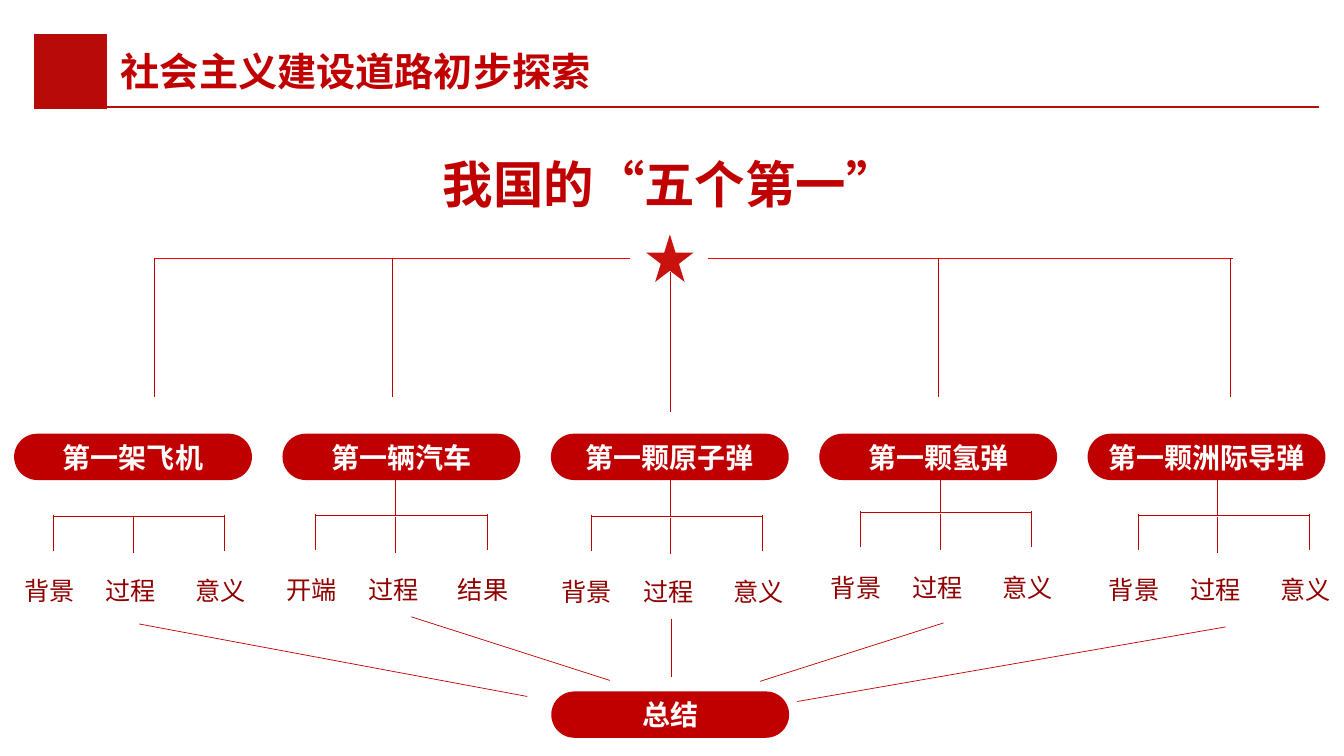
import pptx
import pptx.util
import pptx.dml.color
import pptx.enum.shapes
import pptx.enum.text
import pptx.oxml.ns
import lxml.etree

Pt = pptx.util.Pt
RGBColor = pptx.dml.color.RGBColor
SHAPE = pptx.enum.shapes.MSO_SHAPE
ALIGN = pptx.enum.text.PP_ALIGN
ANCHOR = pptx.enum.text.MSO_ANCHOR

BANNER_RED = RGBColor(0xB8, 0x0B, 0x09)
RED = RGBColor(0xC0, 0x00, 0x00)
BRIGHT_RED = RGBColor(0xFF, 0x00, 0x00)
STAR_RED = RGBColor(0xC9, 0x11, 0x0E)
DARK_RED = RGBColor(0x90, 0x00, 0x00)
WHITE = RGBColor(0xFF, 0xFF, 0xFF)

FONT = "Noto Sans CJK SC"
HEADING = {"size": Pt(28), "bold": True}
TITLE = {"size": Pt(36), "bold": True}
PILL = {"size": Pt(20), "bold": True}
LABEL = {"size": Pt(18), "bold": False}

PILL_LEFT, PILL_TOP, PILL_STEP = 10.1, 309.8, 191.7
PILL_W, PILL_H = 169.9, 33.1
TRUNK_Y = 184.3

# Offset from the branch's left edge, and box width, of its three labels
LABEL_COLUMNS = [(0, 122.4), (58.3, 140.4), (122.6, 76.3)]
# Offset of each tick, and its drop below the branch bar
TICKS = [(28.1, -1), (84.9, 1), (150.5, -1)]

# Pill text, labels, branch left, bar height, has stem, trunk line, summary line
TOPICS = [
    ("第一架飞机", ("背景", "过程", "意义"), 10.1, 368.6, False,
     (110.2, TRUNK_Y, 283.7), (99.4, 445.7, 376.6, 497.5)),
    ("第一辆汽车", ("开端", "过程", "结果"), 197.5, 368, True,
     (280.1, TRUNK_Y, 283.7), (293.8, 440.6, 435.6, 486)),
    ("第一颗原子弹", ("背景", "过程", "意义"), 394, 369, True,
     (478.8, 194.4, 294.5), (479.5, 442.1, 479.5, 483.8)),
    ("第一颗氢弹", ("背景", "过程", "意义"), 586.5, 366.2, True,
     (670.3, TRUNK_Y, 283.7), (673.9, 445, 542.9, 486.7)),
    ("第一颗洲际导弹", ("背景", "过程", "意义"), 785, 368, True,
     (879.1, TRUNK_Y, 283.7), (875.5, 447.8, 569.5, 501.1)),
]


def write(tf, text, style, color, align=ALIGN.LEFT):
    p = tf.paragraphs[0]
    p.alignment = align
    r = p.add_run()
    r.text = text
    for name, value in style.items():
        setattr(r.font, name, value)
    r.font.name = FONT
    r.font.color.rgb = color
    ea = lxml.etree.SubElement(r.font._element, pptx.oxml.ns.qn("a:ea"))
    ea.set("typeface", FONT)


def add_text(s, box, text, style, color, align=ALIGN.LEFT, wrap=True):
    tf = s.shapes.add_textbox(*map(Pt, box)).text_frame
    tf.word_wrap = wrap
    write(tf, text, style, color, align)


def add_line(s, x1, y1, x2, y2, color=RED, width=0.5):
    kind = pptx.enum.shapes.MSO_CONNECTOR.STRAIGHT
    line = s.shapes.add_connector(kind, Pt(x1), Pt(y1), Pt(x2), Pt(y2))
    line.line.color.rgb = color
    line.line.width = Pt(width)
    lxml.etree.SubElement(line._element.spPr, pptx.oxml.ns.qn("a:effectLst"))


def add_block(s, kind, box, color):
    sp = s.shapes.add_shape(kind, *map(Pt, box))
    sp.shadow.inherit = False
    sp.fill.solid()
    sp.fill.fore_color.rgb = color
    sp.line.fill.background()
    return sp


def add_pill(s, left, top, text):
    sp = add_block(s, SHAPE.ROUNDED_RECTANGLE, (left, top, PILL_W, PILL_H), RED)
    sp.adjustments[0] = 0.5
    sp.text_frame.word_wrap = True
    sp.text_frame.vertical_anchor = ANCHOR.MIDDLE
    write(sp.text_frame, text, PILL, WHITE, ALIGN.CENTER)


def add_branch(s, left, bar_y, labels, has_stem):
    """Draw the bracket below a pill and its three labels."""
    for label, (dx, width) in zip(labels, LABEL_COLUMNS):
        add_text(s, (left + dx, bar_y + 39, width, 29), label, LABEL, DARK_RED)
    for dx, dy in TICKS:
        add_line(s, left + dx, bar_y + dy, left + dx, bar_y + dy + 25.7)
    add_line(s, left + TICKS[0][0], bar_y, left + TICKS[-1][0], bar_y)
    if has_stem:
        stem_x = left + TICKS[1][0]
        add_line(s, stem_x, bar_y - 25.9, stem_x, bar_y)


def add_header(s):
    add_block(s, SHAPE.RECTANGLE, (24.5, 24.5, 52, 53.3), BANNER_RED)
    add_line(s, 76.5, 76.4, 942.5, 76.4, BANNER_RED, 1.5)
    add_text(s, (79.2, 30.2, 633.6, 41), "社会主义建设道路初步探索", HEADING, RED)


def main():
    prs = pptx.Presentation()
    prs.slide_width, prs.slide_height = Pt(960), Pt(540)
    s = prs.slides.add_slide(prs.slide_layouts[6])

    add_header(s)
    add_line(s, 110.2, TRUNK_Y, 450, TRUNK_Y, BRIGHT_RED)
    add_block(s, SHAPE.STAR_5_POINT, (461.5, 167.4, 34, 34), STAR_RED)
    add_line(s, 505.4, TRUNK_Y, 880.6, TRUNK_Y, BRIGHT_RED)
    add_text(s, (307.4, 105.8, 342, 51), "我国的“五个第一”", TITLE, RED,
             ALIGN.CENTER, wrap=False)

    for i, (name, labels, left, bar_y, stem, trunk, summary) in enumerate(TOPICS):
        x, top, bottom = trunk
        add_line(s, x, top, x, bottom)
        add_pill(s, PILL_LEFT + i * PILL_STEP, PILL_TOP, name)
        add_branch(s, left, bar_y, labels, stem)
        add_line(s, *summary)
    add_pill(s, 393.8, 493.9, "总结")

    prs.save("out.pptx")


if __name__ == "__main__":
    main()
